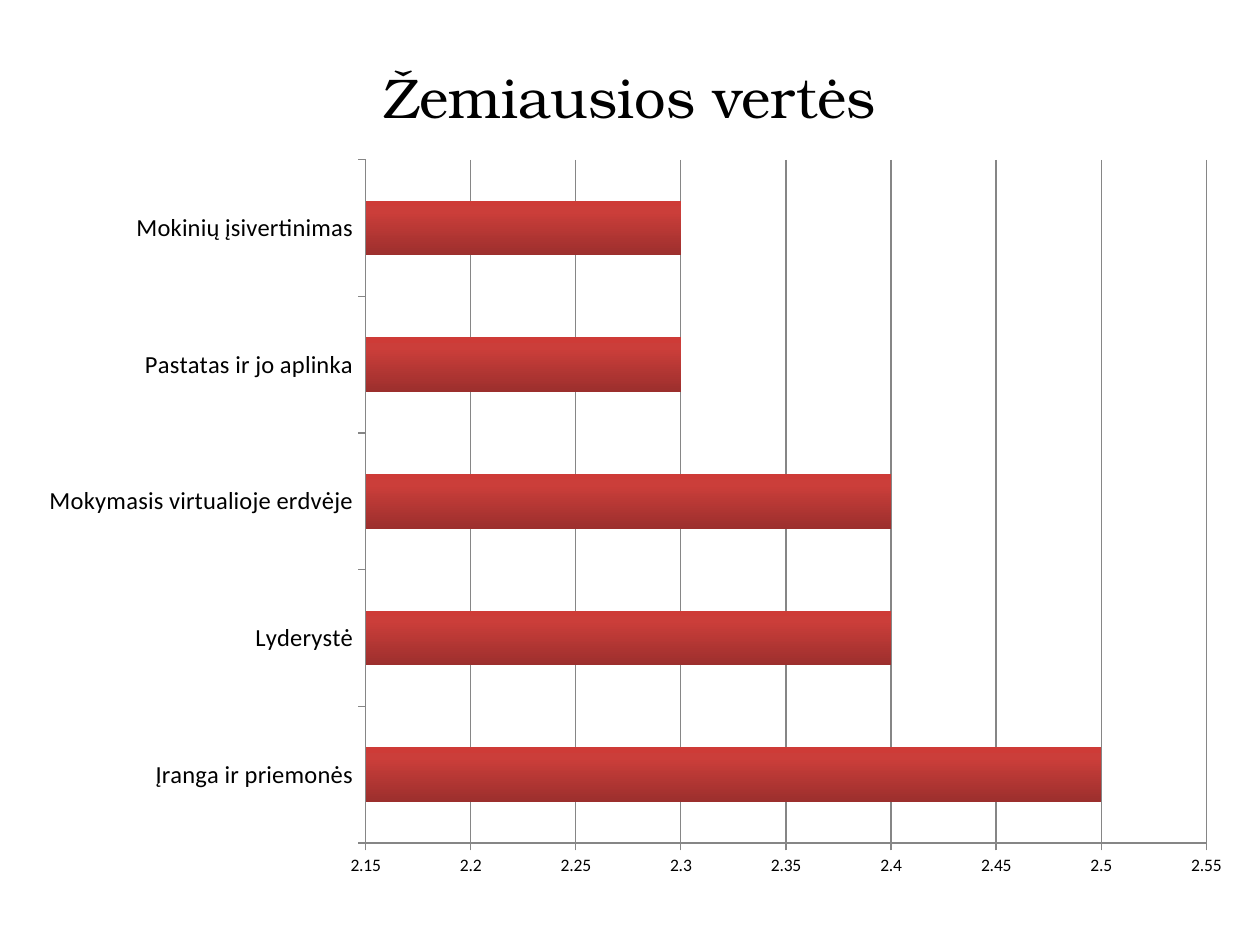
"""Build a slide with a bar chart of the lowest values."""
from pptx import Presentation
from pptx.chart.data import CategoryChartData
from pptx.dml.color import RGBColor
from pptx.enum.chart import XL_CHART_TYPE, XL_TICK_MARK
from pptx.enum.text import MSO_ANCHOR, PP_ALIGN
from pptx.oxml import parse_xml
from pptx.oxml.ns import nsdecls
from pptx.util import Pt

EMU_PER_PX = 914400 / 126
COLORS = {"text": "000000", "line": "868686",
          "bar_dark": "9C2F2D", "bar_mid": "CB3E3A", "bar_light": "CE3B37"}
VALUES = {
    "Įranga ir priemonės": 2.5,
    "Lyderystė": 2.4,
    "Mokymasis virtualioje erdvėje": 2.4,
    "Pastatas ir jo aplinka": 2.3,
    "Mokinių įsivertinimas": 2.3,
}


def px(*lengths):
    return [round(n * EMU_PER_PX) for n in lengths]


def rgb(name):
    return RGBColor.from_string(COLORS[name])


def set_font(font, size, name="Calibri", color="text"):
    font.size = Pt(size)
    font.name = name
    font.color.rgb = rgb(color)


def add_text(slide, text, box, size, name, align=PP_ALIGN.CENTER):
    tf = slide.shapes.add_textbox(*px(*box)).text_frame
    tf.word_wrap = True
    tf.vertical_anchor = MSO_ANCHOR.MIDDLE
    p = tf.paragraphs[0]
    p.alignment = align
    r = p.add_run()
    r.text = text
    set_font(r.font, size, name)


def set_line(line):
    line.color.rgb = rgb("line")
    line.width = Pt(0.75)


def set_gradient(series, stops, angle):
    gs = "".join(f'<a:gs pos="{pos * 1000}"><a:srgbClr val="{COLORS[c]}"/></a:gs>'
                 for pos, c in stops)
    fill = parse_xml(f'<a:gradFill {nsdecls("a")} rotWithShape="1"><a:gsLst>{gs}</a:gsLst>'
                     f'<a:lin ang="{angle * 60000}" scaled="0"/></a:gradFill>')
    series.format.line.fill.background()
    series._element.spPr.insert(0, fill)


def style_axis(axis, size):
    axis.major_tick_mark = XL_TICK_MARK.OUTSIDE
    axis.minor_tick_mark = XL_TICK_MARK.NONE
    set_font(axis.tick_labels.font, size)
    set_line(axis.format.line)


def add_bar_chart(slide, values, box):
    data = CategoryChartData()
    data.categories = list(values)
    data.add_series("Series 1", list(values.values()))
    chart = slide.shapes.add_chart(XL_CHART_TYPE.BAR_STACKED, *px(*box), data).chart
    chart.has_legend = False
    chart.has_title = False
    set_font(chart.font, 10)

    plot = chart.plots[0]
    plot.gap_width = 150
    plot.overlap = 100
    plot.vary_by_categories = False
    set_gradient(plot.series[0],
                 [(0, "bar_dark"), (80, "bar_mid"), (100, "bar_light")], 270)

    style_axis(chart.category_axis, 14)
    axis = chart.value_axis
    style_axis(axis, 10)
    axis.minimum_scale, axis.maximum_scale, axis.major_unit = 2.15, 2.55, 0.05
    axis.tick_labels.number_format = "General"
    axis.tick_labels.number_format_is_linked = False
    axis.has_major_gridlines = True
    set_line(axis.major_gridlines.format.line)


def main():
    prs = Presentation()
    prs.slide_width, prs.slide_height = px(1260, 945)
    slide = prs.slides.add_slide(prs.slide_layouts[6])
    add_text(slide, "Žemiausios vertės", (63, 38, 1134, 117), 32, "TeX Gyre Bonum")
    add_bar_chart(slide, VALUES, (25, 145, 1221, 745))
    prs.save("out.pptx")


if __name__ == "__main__":
    main()
